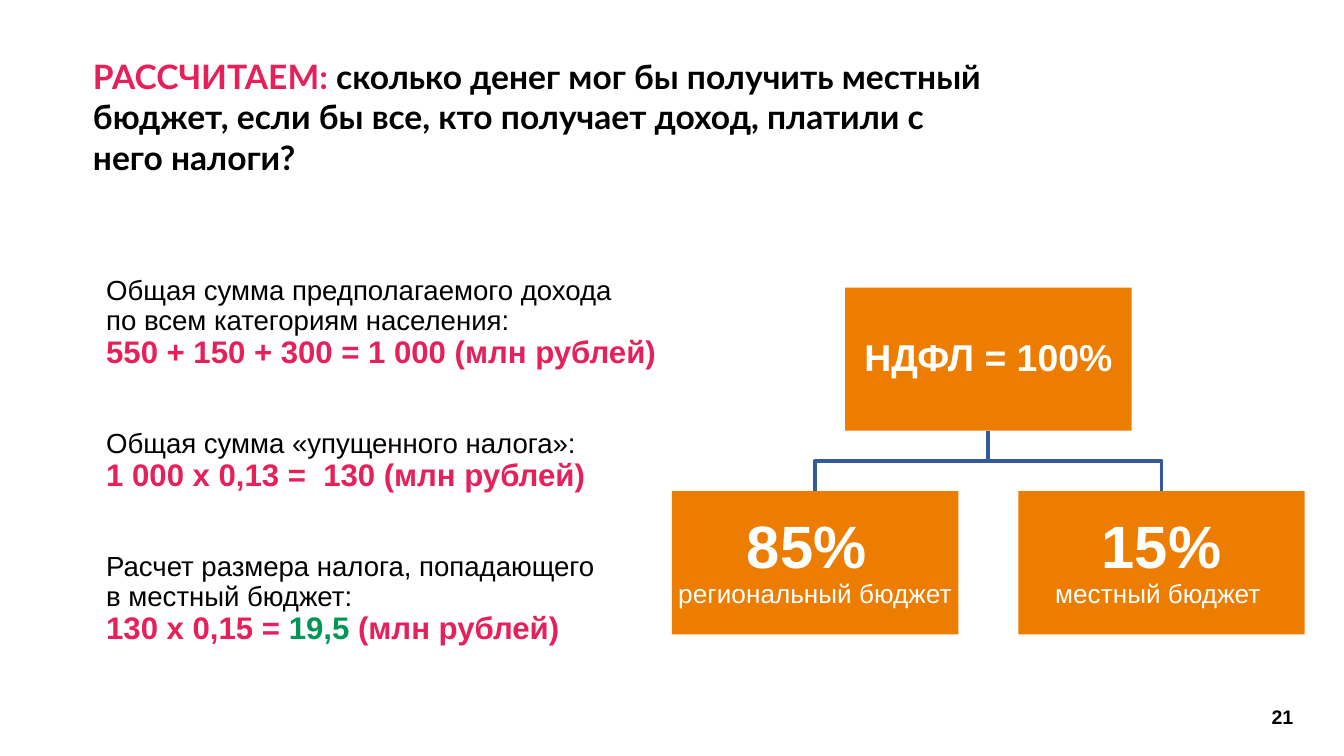
from pptx import Presentation
from pptx.dml.color import RGBColor
from pptx.enum.shapes import MSO_SHAPE
from pptx.enum.text import MSO_ANCHOR, PP_ALIGN
from pptx.util import Pt

BLACK = RGBColor(0x00, 0x00, 0x00)
WHITE = RGBColor(0xFF, 0xFF, 0xFF)
PINK = RGBColor(0xE5, 0x20, 0x5A)
GREEN = RGBColor(0x00, 0x96, 0x55)
ORANGE = RGBColor(0xED, 0x7D, 0x00)
BLUE = RGBColor(0x34, 0x5A, 0x99)


def add_run(paragraph, text, size, color, bold=True, font="Arial"):
    run = paragraph.add_run()
    run.text = text
    run.font.name = font
    run.font.size = Pt(size)
    run.font.bold = bold
    run.font.color.rgb = color


def set_frame(shape, horizontal, vertical, anchor=MSO_ANCHOR.TOP):
    frame = shape.text_frame
    frame.word_wrap = True
    frame.margin_left = frame.margin_right = Pt(horizontal)
    frame.margin_top = frame.margin_bottom = Pt(vertical)
    frame.vertical_anchor = anchor
    return frame


presentation = Presentation()
presentation.slide_width = Pt(720)
presentation.slide_height = Pt(405)
slide = presentation.slides.add_slide(presentation.slide_layouts[6])

title = slide.shapes.add_textbox(Pt(49.8), Pt(30), Pt(476), Pt(124.5))
paragraph = set_frame(title, 0, 0).paragraphs[0]
add_run(paragraph, "РАССЧИТАЕМ: ", 18, PINK, font="Lato")
add_run(
    paragraph,
    "сколько денег мог бы получить местный бюджет, если бы все, кто получает доход, платили с него налоги?",
    18, BLACK, font="Lato",
)

calculations = [
    (["Общая сумма предполагаемого дохода", "по всем категориям населения:"],
     [("550 + 150 + 300 = 1 000 (млн рублей)", PINK)]),
    (["Общая сумма «упущенного налога»:"],
     [("1 000 х 0,13 =  130 (млн рублей)", PINK)]),
    (["Расчет размера налога, попадающего", "в местный бюджет:"],
     [("130 х 0,15 = ", PINK), ("19,5 ", GREEN), ("(млн рублей)", PINK)]),
]
body = slide.shapes.add_textbox(Pt(49.8), Pt(144.6), Pt(317.5), Pt(211.5))
frame = set_frame(body, 7.2, 3.6)
for index, (label_lines, formula) in enumerate(calculations):
    paragraph = frame.add_paragraph() if index else frame.paragraphs[0]
    paragraph.line_spacing = 0.9
    if index:
        paragraph.space_before = Pt(32)
    for line_index, line in enumerate(label_lines):
        if line_index:
            paragraph.add_line_break()
        add_run(paragraph, line, 14.8, BLACK, bold=False)
    paragraph = frame.add_paragraph()
    paragraph.line_spacing = 0.9
    for text, color in formula:
        add_run(paragraph, text, 16.7, color)

box_width, box_height = 153.4, 76.7
root_left, root_top = 452.8, 154.1
child_top = 263.2
child_offset = 92.8
root_center = root_left + box_width / 2
root_bottom = root_top + box_height
middle = (root_bottom + child_top) / 2

for offset in (child_offset, -child_offset):
    builder = slide.shapes.build_freeform(Pt(root_center), Pt(root_bottom))
    builder.add_line_segments(
        [
            (Pt(root_center), Pt(middle)),
            (Pt(root_center + offset), Pt(middle)),
            (Pt(root_center + offset), Pt(child_top)),
        ],
        close=False,
    )
    branch = builder.convert_to_shape()
    branch.shadow.inherit = False
    branch.fill.background()
    branch.line.color.rgb = BLUE
    branch.line.width = Pt(2)

boxes = [
    (root_left, root_top, [("НДФЛ = 100%", 20, True)]),
    (root_left - child_offset, child_top, [("85% ", 32, True), ("региональный бюджет", 14, False)]),
    (root_left + child_offset, child_top, [("15%", 32, True), ("местный бюджет ", 14, False)]),
]
for left, top, lines in boxes:
    box = slide.shapes.add_shape(MSO_SHAPE.RECTANGLE, Pt(left), Pt(top), Pt(box_width), Pt(box_height))
    box.shadow.inherit = False
    box.fill.solid()
    box.fill.fore_color.rgb = ORANGE
    box.line.fill.background()
    frame = set_frame(box, 1.5, 1.5, MSO_ANCHOR.MIDDLE)
    for index, (text, size, bold) in enumerate(lines):
        paragraph = frame.add_paragraph() if index else frame.paragraphs[0]
        paragraph.alignment = PP_ALIGN.CENTER
        paragraph.line_spacing = 0.9
        add_run(paragraph, text, size, WHITE, bold)

page_number = slide.shapes.add_textbox(Pt(658.2), Pt(373.3), Pt(57.6), Pt(21.6))
paragraph = set_frame(page_number, 4.3, 4.3, MSO_ANCHOR.MIDDLE).paragraphs[0]
paragraph.alignment = PP_ALIGN.CENTER
add_run(paragraph, "21", 10.5, BLACK)

presentation.save("out.pptx")
